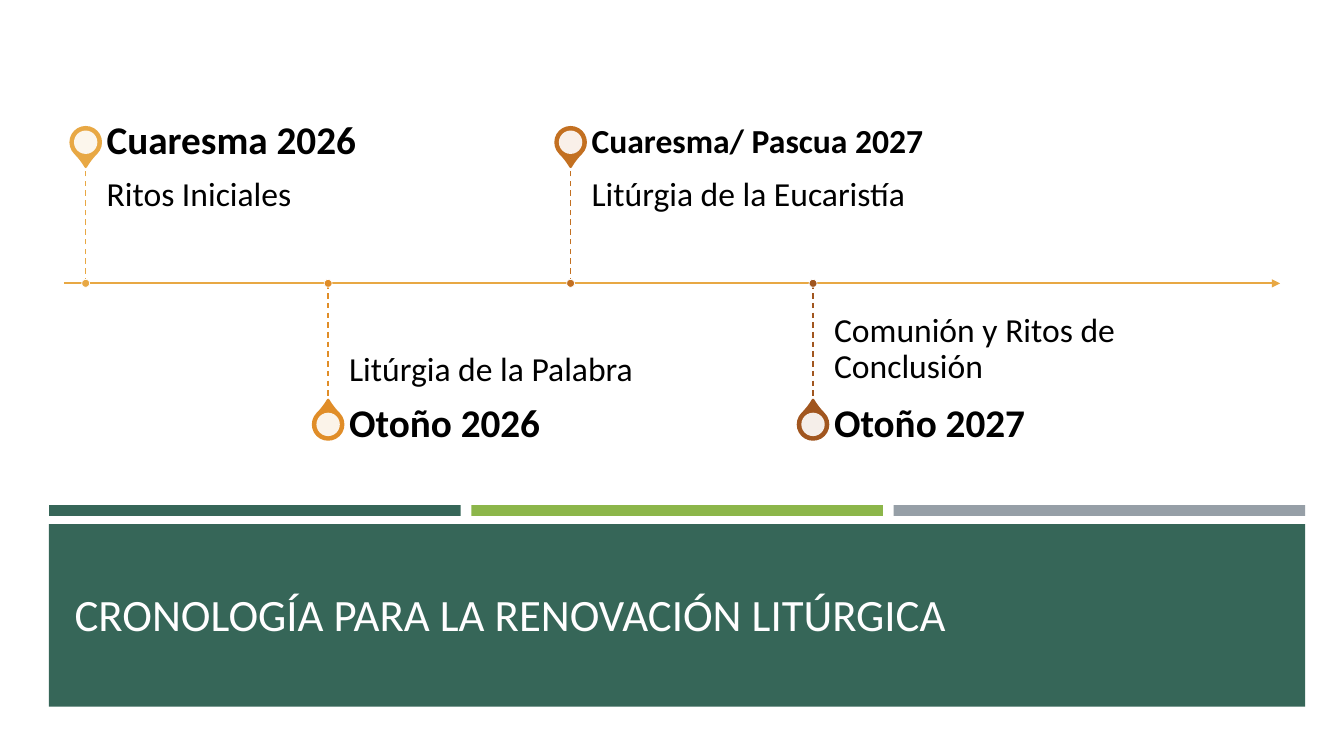
import pptx
import pptx.dml.color
import pptx.enum.dml
import pptx.enum.shapes
import pptx.enum.text
import pptx.oxml.ns
import pptx.util
from lxml import etree
from pptx.util import Cm

SHAPE = pptx.enum.shapes.MSO_SHAPE
ANCHOR = pptx.enum.text.MSO_ANCHOR
COLORS = {
    "white": "FFFFFF", "black": "000000", "title": "FFFEFF",
    "green": "366658", "lime": "8CB64A", "gray": "969FA7",
    "gold": "E8A844", "orange": "E08D28", "copper": "C37021", "brown": "A1561F",
}
# date, date size, rite, colour
MILESTONES = [
    ("Cuaresma 2026", 28, "Ritos Iniciales", "gold"),
    ("Otoño 2026", 28, "Litúrgia de la Palabra", "orange"),
    ("Cuaresma/ Pascua 2027", 24, "Litúrgia de la Eucaristía", "copper"),
    ("Otoño 2027", 28, "Comunión y Ritos de Conclusión", "brown"),
]
AXIS_Y = 7.14
FIRST_X, STEP_X = 2.16, 6.11
STEM, DATE_HEIGHT = 3.02, 1.07
TEXT_OFFSET, TEXT_WIDTH = 0.53, 10.19


def rgb(name):
    return pptx.dml.color.RGBColor.from_string(COLORS[name])


def add_xml(parent, tag, **attributes):
    return etree.SubElement(parent, pptx.oxml.ns.qn(tag), **attributes)


def write_text(frame, text, size=24, color="black", bold=False, spacing=0.9):
    paragraph = frame.paragraphs[0]
    paragraph.line_spacing = spacing
    run = paragraph.add_run()
    run.text = text
    run.font.name = "Calibri"
    run.font.size = pptx.util.Pt(size)
    run.font.bold = bold
    run.font.color.rgb = rgb(color)


class TimelineSlide:
    def __init__(self, slide):
        self.slide = slide

    def shape(self, kind, left, top, width, height, fill, line=None, weight=1, alpha=None):
        """Add a preset shape; alpha is the fill's opacity in percent."""
        shape = self.slide.shapes.add_shape(kind, Cm(left), Cm(top), Cm(width), Cm(height))
        shape.shadow.inherit = False
        shape.fill.solid()
        shape.fill.fore_color.rgb = rgb(fill)
        if alpha:
            color = shape.fill._xPr.find(".//" + pptx.oxml.ns.qn("a:srgbClr"))
            add_xml(color, "a:alpha", val=str(alpha * 1000))
        if line:
            shape.line.color.rgb = rgb(line)
            shape.line.width = pptx.util.Pt(weight)
        else:
            shape.line.fill.background()
        return shape

    def centred(self, kind, x, y, size, fill, **style):
        return self.shape(kind, x - size / 2, y - size / 2, size, size, fill, **style)

    def line(self, start, end, color, weight, dashed=False, arrow=False):
        connector = self.slide.shapes.add_connector(
            pptx.enum.shapes.MSO_CONNECTOR.STRAIGHT, *map(Cm, start + end))
        connector.line.color.rgb = rgb(color)
        connector.line.width = pptx.util.Pt(weight)
        if dashed:
            connector.line.dash_style = pptx.enum.dml.MSO_LINE.DASH
        if arrow:
            add_xml(connector.line._get_or_add_ln(), "a:tailEnd", type="triangle")
        add_xml(connector._element.spPr, "a:effectLst")

    def text(self, text, left, top, width, height, anchor, insets=(0, 0, 0, 0), **style):
        """Add a text box; insets are left, top, right, bottom."""
        box = self.slide.shapes.add_textbox(Cm(left), Cm(top), Cm(width), Cm(height))
        frame = box.text_frame
        frame.word_wrap = True
        frame.vertical_anchor = anchor
        (frame.margin_left, frame.margin_top,
         frame.margin_right, frame.margin_bottom) = map(Cm, insets)
        write_text(frame, text, **style)

    def milestone(self, x, above, date, size, rite, color):
        if above:
            direction, rotation, anchor = -1, 135, ANCHOR.TOP
            rite_top, date_top = AXIS_Y - STEM, AXIS_Y - STEM - DATE_HEIGHT
            insets = (0, 0.43, 0.43, 0.64)
        else:
            direction, rotation, anchor = 1, 315, ANCHOR.BOTTOM
            rite_top, date_top = AXIS_Y, AXIS_Y + STEM
            insets = (0, 0.64, 0, 0.43)
        pin_y = date_top + DATE_HEIGHT / 2
        pin = self.centred(SHAPE.TEAR, x, pin_y, 0.76, color, line=color, weight=1.75)
        pin.adjustments[0] = 1.15
        pin.rotation = rotation
        self.centred(SHAPE.OVAL, x, pin_y, 0.59, "white", alpha=90)
        left = x + TEXT_OFFSET
        self.text(rite, left, rite_top, TEXT_WIDTH, STEM, anchor, insets)
        self.text(date, left, date_top, TEXT_WIDTH, DATE_HEIGHT, ANCHOR.MIDDLE,
                  size=size, bold=True)
        self.line((x, AXIS_Y), (x, AXIS_Y + direction * STEM), color, 1, dashed=True)
        self.centred(SHAPE.OVAL, x, AXIS_Y, 0.2, color, line="white", weight=0.5)


def main():
    presentation = pptx.Presentation()
    presentation.slide_width, presentation.slide_height = Cm(33.87), Cm(19.05)
    slide = presentation.slides.add_slide(presentation.slide_layouts[6])
    timeline = TimelineSlide(slide)

    for index, color in enumerate(("green", "lime", "gray")):
        timeline.shape(SHAPE.RECTANGLE, 1.24 + index * 10.64, 12.73, 10.37, 0.27, color)
    timeline.shape(SHAPE.RECTANGLE, 1.23, 13.21, 31.66, 4.6, "green")
    timeline.text("CRONOLOGÍA PARA LA RENOVACIÓN LITÚRGICA", 1.63, 13.46, 30.63, 2.82,
                  ANCHOR.BOTTOM, (0.25, 0.13, 0.25, 0.13),
                  size=32, color="title", spacing=0.9)

    timeline.line((1.61, AXIS_Y), (32.26, AXIS_Y), "gold", 1.5, arrow=True)
    for index, milestone in enumerate(MILESTONES):
        timeline.milestone(FIRST_X + index * STEP_X, index % 2 == 0, *milestone)
    presentation.save("out.pptx")


if __name__ == "__main__":
    main()
